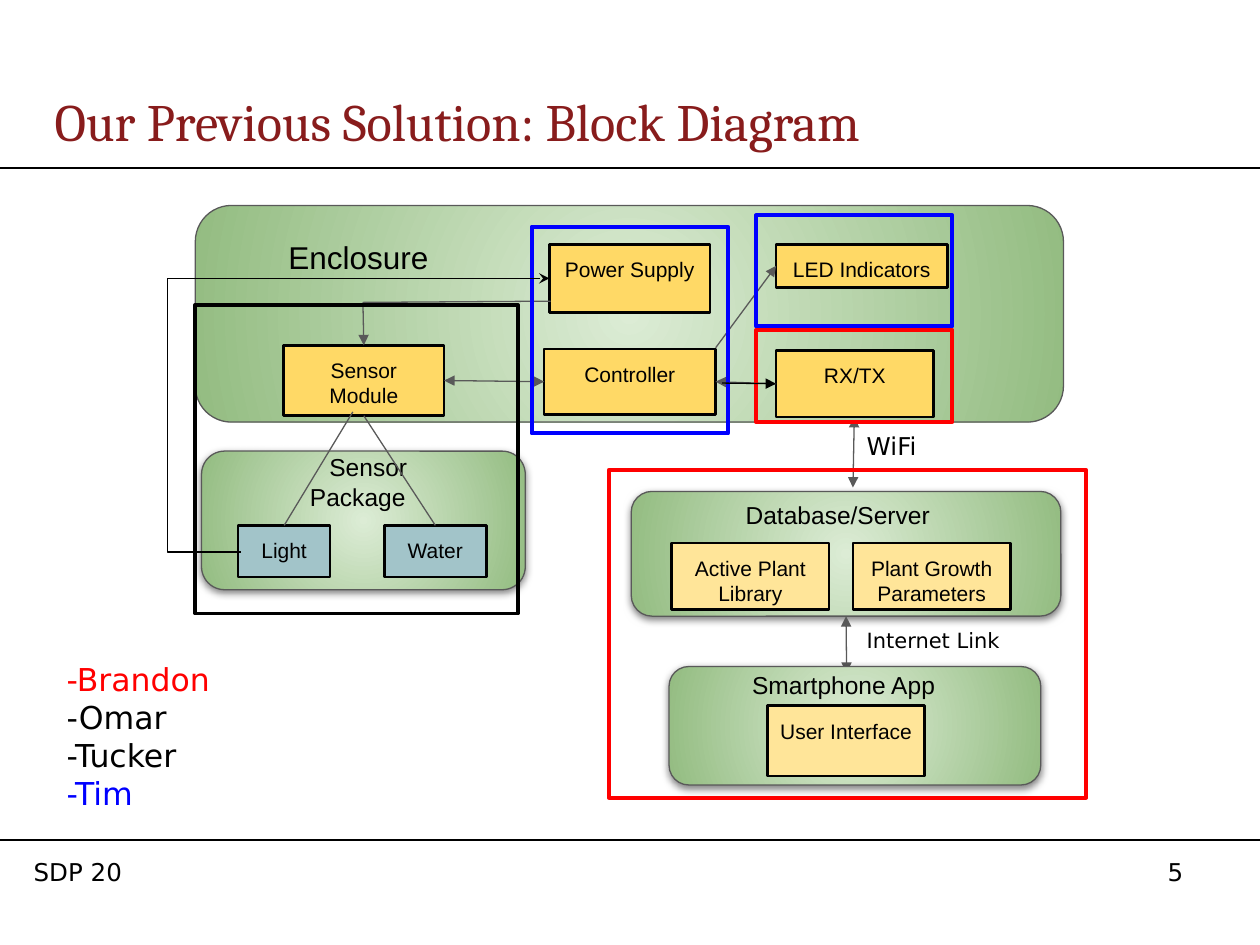
"""Build a slide with the block diagram of a plant monitoring system."""
from dataclasses import dataclass

from pptx import Presentation
from pptx import util as u
from pptx.dml.color import RGBColor
from pptx.enum import shapes, text
from pptx.oxml import parse_xml
from pptx.oxml.ns import nsdecls, qn

Pt = u.Pt


@dataclass(frozen=True)
class Theme:
    black: str = "000000"
    grey: str = "595959"
    maroon: str = "881C1C"
    red: str = "FF0000"
    blue: str = "0000FF"
    card_center: str = "DCECD5"
    card_edge: str = "93BC81"
    module: str = "FFD966"
    software: str = "FFE599"
    sensor: str = "A2C4C9"
    title_size: int = 30
    large: int = 18
    medium: int = 14
    small: int = 12
    title_font: str = "Cambria"
    diagram_font: str = "Arial"
    plain_font: str = "DejaVu Sans"


theme = Theme()
rgb = RGBColor.from_string
LEFT, CENTER = text.PP_ALIGN.LEFT, text.PP_ALIGN.CENTER
TOP, MIDDLE = text.MSO_ANCHOR.TOP, text.MSO_ANCHOR.MIDDLE
TOP_SIDE, LEFT_SIDE, BOTTOM_SIDE, RIGHT_SIDE = range(4)


def write(shape, content, size, font, align=CENTER, color=theme.black, inset=7.2, anchor=TOP):
    frame = shape.text_frame
    frame.text = content
    frame.word_wrap = True
    frame.auto_size = text.MSO_AUTO_SIZE.NONE
    frame.vertical_anchor = anchor
    frame.margin_left = frame.margin_right = Pt(7.2)
    frame.margin_top = frame.margin_bottom = Pt(inset)
    for paragraph in frame.paragraphs:
        paragraph.alignment = align
        for run in paragraph.runs:
            run.font.size = Pt(size)
            run.font.name = font
            run.font.color.rgb = rgb(color)


def add_line(start, end, color=theme.grey, width=0.75, head=None, tail=None, kind="STRAIGHT"):
    """Join ends given as (shape, side); place ends given as (x, y)."""
    joined = [not isinstance(point[0], (int, float)) for point in (start, end)]
    places = [Pt(value) for point, join in zip((start, end), joined)
              for value in ((0, 0) if join else point)]
    line = slide.shapes.add_connector(shapes.MSO_CONNECTOR[kind], *places)
    if joined[0]:
        line.begin_connect(*start)
    if joined[1]:
        line.end_connect(*end)
    line.line.color.rgb = rgb(color)
    line.line.width = Pt(width)
    for tag, arrow in (("headEnd", head), ("tailEnd", tail)):
        if arrow:
            line.line._get_or_add_ln().append(
                parse_xml(f'<a:{tag} {nsdecls("a")} type="{arrow}"/>'))
    line._element.spPr.append(parse_xml(f'<a:effectLst {nsdecls("a")}/>'))
    return line


presentation = Presentation()
presentation.slide_width, presentation.slide_height = Pt(720), Pt(540)
slide = presentation.slides.add_slide(presentation.slide_layouts[5])

for y in (96, 480):
    add_line((0, y), (720, y), theme.black, 1)

title = slide.shapes.title
title.left, title.top, title.width, title.height = Pt(24), Pt(48), Pt(696), Pt(42)
write(title, "Our Previous Solution: Block Diagram", theme.title_size, theme.title_font,
      LEFT, theme.maroon, 3.6, MIDDLE)

cards = {}
for name, box, shadowed in (
    ("package", (115.2, 257.8, 185, 79.2), True),
    ("database", (360.7, 280.8, 245.5, 71.3), True),
    ("enclosure", (111.6, 117.4, 496.1, 123.8), False),
    ("app", (382.3, 380.9, 212.4, 67.7), True),
):
    if name == "enclosure":
        add_line((488.2, 238.3), (487.4, 278.6), head="triangle", tail="triangle")
        add_line((cards["database"], BOTTOM_SIDE), (483.8, 384.5),
                 head="triangle", tail="triangle")
    card = slide.shapes.add_shape(shapes.MSO_SHAPE.FLOWCHART_ALTERNATE_PROCESS, *map(Pt, box))
    card.fill.gradient()
    for stop, color in zip(card.fill.gradient_stops, (theme.card_center, theme.card_edge)):
        stop.color.rgb = rgb(color)
    gradient = card._element.spPr.find(qn("a:gradFill"))
    gradient.replace(gradient.find(qn("a:lin")), parse_xml(
        f'<a:path {nsdecls("a")} path="circle">'
        '<a:fillToRect l="50000" t="50000" r="50000" b="50000"/></a:path>'))
    card.line.color.rgb = rgb(theme.grey)
    card.line.width = Pt(0.75)
    card.shadow.inherit = False
    if shadowed:
        card._element.spPr.find(qn("a:effectLst")).append(parse_xml(
            f'<a:outerShdw {nsdecls("a")} blurRad="{Pt(4.5)}" dist="{Pt(1.5)}" dir="5400000">'
            f'<a:srgbClr val="{theme.black}"><a:alpha val="50000"/></a:srgbClr></a:outerShdw>'))
    cards[name] = card

modules = {}
for label, box, color in (
    ("Light", (136.1, 300.2, 52.6, 29.5), theme.sensor),
    ("Water", (219.6, 300.2, 58.3, 29.5), theme.sensor),
    ("Plant Growth Parameters", (487.4, 310.3, 90, 38.2), theme.software),
    ("Active Plant Library", (383.8, 310.3, 90, 38.2), theme.software),
    ("User Interface", (438.5, 403.2, 90, 40.3), theme.software),
    ("Power Supply", (313.9, 139.7, 91.8, 38.9), theme.module),
    ("LED Indicators", (443.5, 139.7, 97.9, 24.5), theme.module),
    ("Controller", (311, 199.4, 97.9, 37.4), theme.module),
    ("Sensor Module", (162, 197.3, 91.8, 40.3), theme.module),
    ("RX/TX", (443.5, 200.2, 90, 38.2), theme.module),
):
    module = slide.shapes.add_shape(shapes.MSO_SHAPE.RECTANGLE, *map(Pt, box))
    module.shadow.inherit = False
    module.fill.solid()
    module.fill.fore_color.rgb = rgb(color)
    module.line.color.rgb = rgb(theme.black)
    module.line.width = Pt(1.5)
    write(module, label, theme.small, theme.diagram_font)
    modules[label] = module

labels = {}
for label, box, size, font, align, inset in (
    ("Sensor Package", (161.3, 251.3, 86.4, 46), theme.medium, theme.diagram_font, CENTER, 7.2),
    ("Database/Server", (419, 278.6, 136.1, 35.3), theme.medium, theme.diagram_font, LEFT, 7.2),
    ("Smartphone App", (412.6, 375.8, 139, 20.2), theme.medium, theme.diagram_font, CENTER, 7.2),
    ("Enclosure", (152, 128.9, 105.8, 25.9), theme.large, theme.diagram_font, CENTER, 7.2),
    ("-Brandon\n-Omar\n-Tucker\n-Tim", (31, 370.1, 168.5, 102.2), theme.large,
     theme.plain_font, LEFT, 7.2),
    ("Internet Link", (488.2, 352.1, 100.8, 13), theme.small, theme.plain_font, LEFT, 7.2),
    ("WiFi", (488.2, 239.8, 52.6, 13), theme.medium, theme.plain_font, LEFT, 7.2),
    ("SDP 20", (12.2, 486, 242.6, 24.5), theme.medium, theme.plain_font, LEFT, 3.6),
    ("5", (660.2, 486, 48.2, 24.5), theme.medium, theme.plain_font, LEFT, 3.6),
):
    labels[label] = slide.shapes.add_textbox(*map(Pt, box))
    write(labels[label], label, size, font, align, inset=inset)

package_line = labels["Sensor Package"].text_frame.paragraphs[0]
package_line._p.get_or_add_pPr().set("indent", str(Pt(12)))
members = labels["-Brandon\n-Omar\n-Tucker\n-Tim"].text_frame.paragraphs
for member, color in ((members[0], theme.red), (members[-1], theme.blue)):
    member.runs[0].font.color.rgb = rgb(color)

controller, sensor_module = modules["Controller"], modules["Sensor Module"]
add_line((409, 198.7), (modules["LED Indicators"], LEFT_SIDE), tail="triangle")
add_line((sensor_module, RIGHT_SIDE), (controller, LEFT_SIDE), head="triangle", tail="triangle")
add_line((modules["RX/TX"], LEFT_SIDE), (controller, RIGHT_SIDE), tail="triangle")
add_line((201.6, 235.4), (modules["Light"], TOP_SIDE))
add_line((modules["Water"], TOP_SIDE), (sensor_module, BOTTOM_SIDE))
add_line((314.6, 172.1), (207.4, 172.8))
add_line((207.4, 172.8), (sensor_module, TOP_SIDE), tail="triangle")

for box, color in (
    ((347.8, 268.6, 272.9, 187.2), theme.red),
    ((303.8, 129.6, 112.3, 118.1), theme.blue),
    ((432, 123.1, 112.3, 63.4), theme.blue),
    ((111.6, 174.2, 184.3, 176.4), theme.black),
    ((432, 188.6, 112.3, 52.6), theme.red),
):
    owner_frame = slide.shapes.add_shape(shapes.MSO_SHAPE.RECTANGLE, *map(Pt, box))
    owner_frame.shadow.inherit = False
    owner_frame.fill.background()
    owner_frame.line.color.rgb = rgb(color)
    owner_frame.line.width = Pt(2.25)

add_line((412.6, 218.9), (modules["RX/TX"], LEFT_SIDE), theme.black, tail="triangle")
power_feed = add_line((137.5, 315.4), (313.9, 159.1), theme.black, tail="stealth", kind="ELBOW")
geometry = power_feed._element.spPr.find(qn("a:prstGeom"))
geometry.find(qn("a:avLst")).append(
    parse_xml(f'<a:gd {nsdecls("a")} name="adj1" fmla="val -23800"/>'))

presentation.save("out.pptx")
